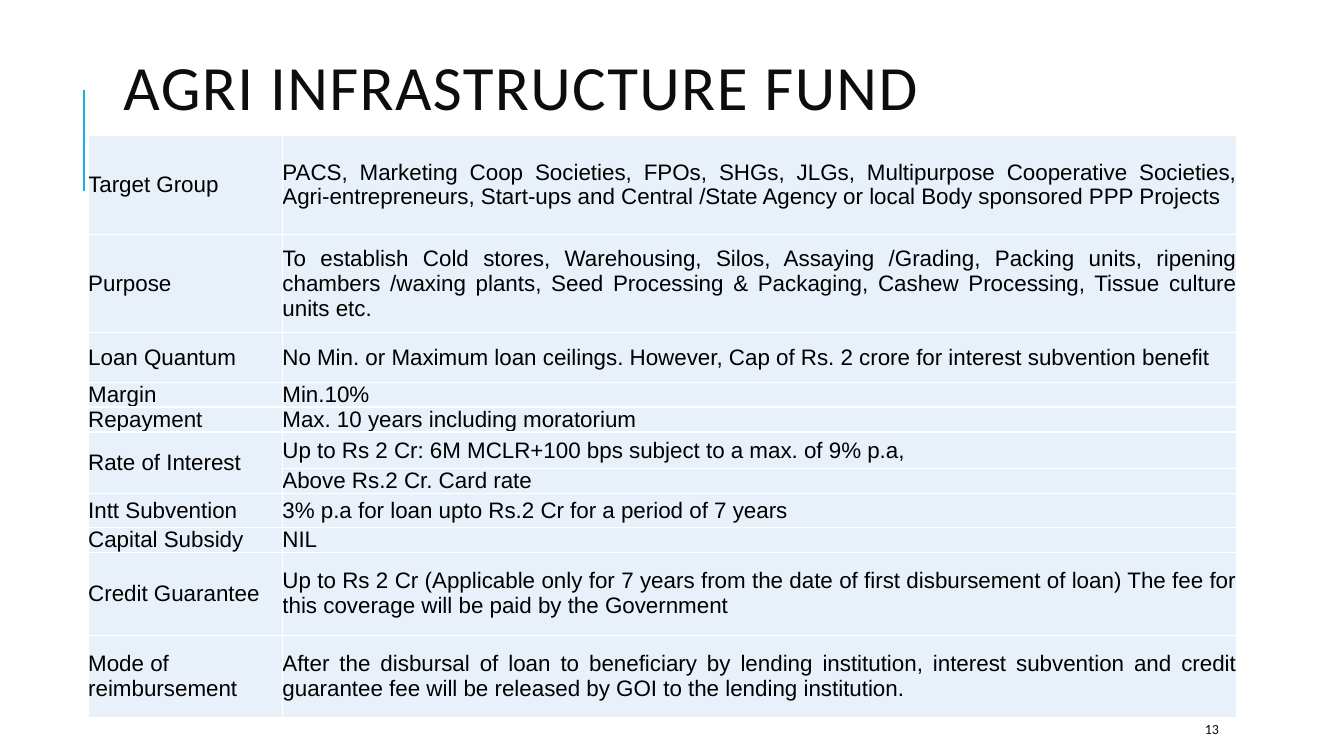
import pptx
import pptx.util
import pptx.dml.color
import pptx.enum.shapes
import pptx.enum.text
import pptx.oxml
import pptx.oxml.ns

PX = 9525  # 96 px to the inch
HUES = {"page": "FFFFFF", "rule": "1CADE4", "head": "0D0D0D",
        "text": "000000", "cell": "E8F1FA", "edge": "FFFFFF"}
ALIGN = pptx.enum.text.PP_ALIGN
MID = pptx.enum.text.MSO_ANCHOR.MIDDLE


def hue(name):
    return pptx.dml.color.RGBColor.from_string(HUES[name])


def style(para, face, size, tone):
    for key, val in {"name": face, "size": pptx.util.Pt(size)}.items():
        setattr(para.runs[0].font, key, val)
    para.runs[0].font.color.rgb = hue(tone)


# Slide
deck = pptx.Presentation()
deck.slide_width, deck.slide_height = 1280 * PX, 720 * PX
slide = deck.slides.add_slide(deck.slide_layouts[5])
slide.background.fill.solid()
slide.background.fill.fore_color.rgb = hue("page")

# Rule beside the title
rule = slide.shapes.add_connector(
    pptx.enum.shapes.MSO_CONNECTOR.STRAIGHT, 80 * PX, 182 * PX, 80 * PX, 86 * PX)
rule.line.color.rgb = hue("rule")
rule.line.width = pptx.util.Pt(1.5)
rule._element.spPr.append(pptx.oxml.parse_xml(
    f'<a:effectLst {pptx.oxml.ns.nsdecls("a")}/>'))

# Title and page number
title = slide.shapes.title
page = slide.shapes.add_textbox(1138 * PX, 680 * PX, 102 * PX, 29 * PX)
heads = [(title, "AGRI INFRASTRUCTURE FUND", 45),
         (page, "13", 10)]
for box, text, size in heads:
    frame = box.text_frame
    frame.text = text
    form = {"word_wrap": True, "vertical_anchor": MID,
            "auto_size": pptx.enum.text.MSO_AUTO_SIZE.NONE}
    for key, val in form.items():
        setattr(frame, key, val)
    frame.paragraphs[0].alignment = ALIGN.LEFT
    style(frame.paragraphs[0], "Calibri", size, "head")
place = {"left": 108, "top": 61, "width": 1020, "height": 53}
for key, val in place.items():
    setattr(title, key, val * PX)
line = title.text_frame.paragraphs[0]
line.line_spacing = 0.8
line.runs[0].font._element.set("spc", "100")

# Table rows: height, label, detail
rows = [
    (94, "Target Group", "PACS, Marketing Coop Societies, FPOs, SHGs, JLGs, Multipurpose "
     "Cooperative Societies, Agri-entrepreneurs, Start-ups and Central /State Agency "
     "or local Body sponsored PPP Projects"),
    (94, "Purpose", "To establish Cold stores, Warehousing, Silos, Assaying /Grading, "
     "Packing units, ripening chambers /waxing plants, Seed Processing & Packaging, "
     "Cashew Processing, Tissue culture units etc."),
    (47, "Loan Quantum", "No Min. or Maximum loan ceilings. However, Cap of Rs. 2 crore "
     "for interest subvention benefit"),
    (17, "Margin", "Min.10%"),
    (17, "Repayment", "Max. 10 years including moratorium"),
    (35, "Rate of Interest", "Up to Rs 2 Cr: 6M MCLR+100 bps subject to a max. of 9% p.a,"),
    (17, "", "Above Rs.2 Cr. Card rate"),
    (32, "Intt Subvention", "3% p.a for loan upto Rs.2 Cr for a period of 7 years"),
    (17, "Capital Subsidy", "NIL"),
    (79, "Credit Guarantee", "Up to Rs 2 Cr (Applicable only for 7 years from the date of "
     "first disbursement of loan) The fee for this coverage will be paid by the Government"),
    (79, "Mode of reimbursement", "After the disbursal of loan to beneficiary by lending "
     "institution, interest subvention and credit guarantee fee will be released by GOI "
     "to the lending institution."),
]
grid = slide.shapes.add_table(
    len(rows), 2, 84 * PX, 129 * PX, 1094 * PX, 564 * PX).table
for col, width in zip(grid.columns, (185, 909)):
    col.width = width * PX
grid.first_row = grid.horz_banding = False

# Cells
form = {"margin_left": 0, "margin_right": 0, "margin_top": 0,
        "margin_bottom": 0, "vertical_anchor": MID}
for r, (height, *texts) in enumerate(rows):
    grid.rows[r].height = height * PX
    for c, text in enumerate(texts):
        cell = grid.cell(r, c)
        for key, val in form.items():
            setattr(cell, key, val)
        props = cell._tc.get_or_add_tcPr()
        for side in ("lnL", "lnR", "lnT", "lnB"):
            props.append(pptx.oxml.parse_xml(
                f'<a:{side} {pptx.oxml.ns.nsdecls("a")} w="12700"><a:solidFill>'
                f'<a:srgbClr val="{HUES["edge"]}"/></a:solidFill></a:{side}>'))
        cell.fill.solid()
        cell.fill.fore_color.rgb = hue("cell")
        if text:
            cell.text = text
            para = cell.text_frame.paragraphs[0]
            para.alignment = ALIGN.JUSTIFY if c else ALIGN.LEFT
            style(para, "Arial", 16, "text")
grid.cell(5, 0).merge(grid.cell(6, 0))  # rate of interest spans two rows

deck.save("out.pptx")
